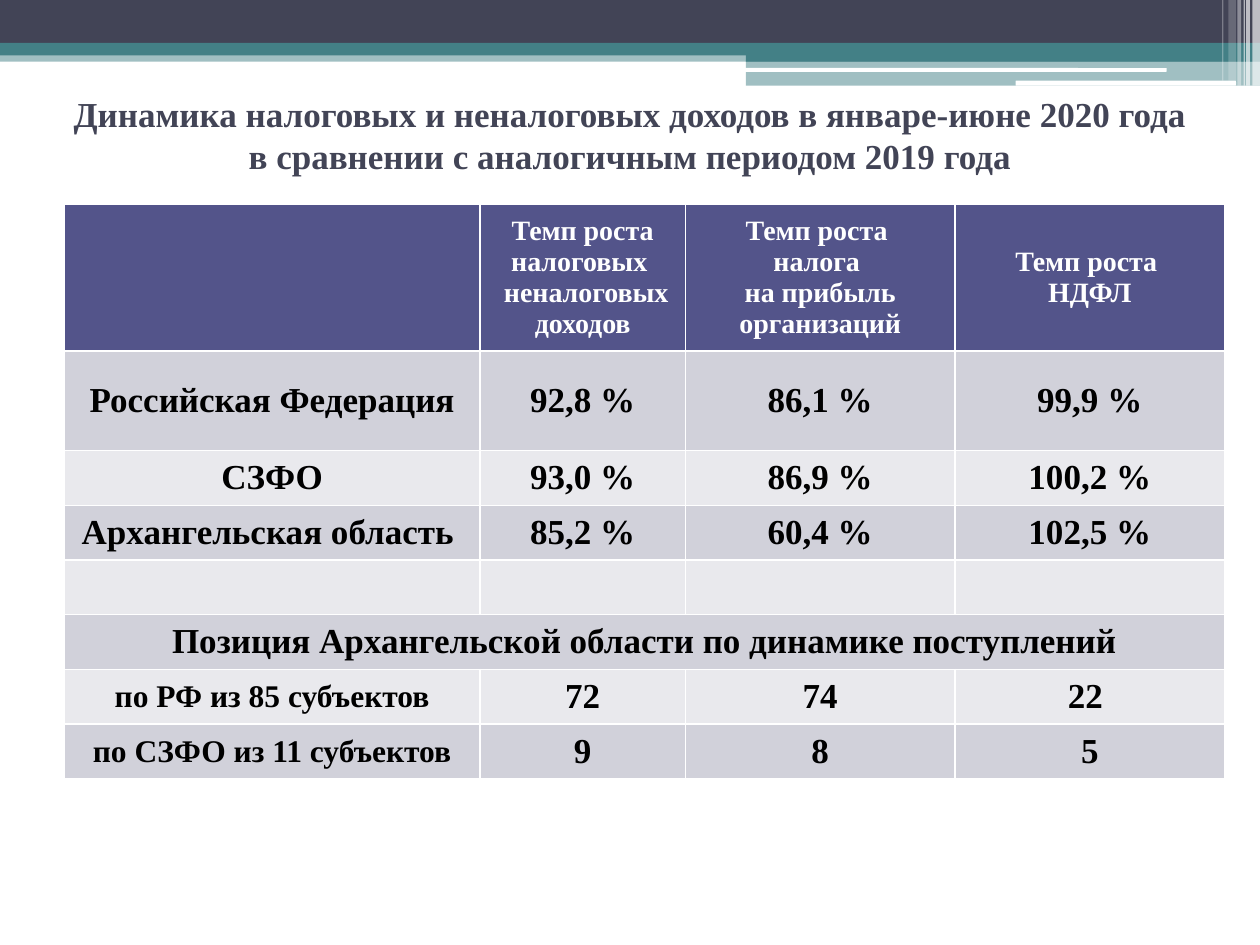
"""Build a slide with a table of tax revenue growth rates."""
from lxml.etree import SubElement
from pptx import Presentation
from pptx.dml.color import RGBColor
from pptx.enum.shapes import MSO_SHAPE as Shape
from pptx.enum.text import MSO_ANCHOR as Anchor, PP_ALIGN as Align
from pptx.oxml.ns import qn
from pptx.util import Inches, Pt

FONT = "Times New Roman"
WHITE = RGBColor(0xFF, 0xFF, 0xFF)
BLACK = RGBColor(0x00, 0x00, 0x00)
SLATE = RGBColor(0x42, 0x44, 0x56)
TEAL = RGBColor(0x43, 0x80, 0x86)
INDIGO = RGBColor(0x53, 0x54, 0x8A)
DARK_BAND = RGBColor(0xD1, 0xD1, 0xDA)
LIGHT_BAND = RGBColor(0xE9, 0xE9, 0xED)


def add_bar(left, top, width, height, color, opacity=100, kind=Shape.RECTANGLE):
    shape = slide.shapes.add_shape(
        kind, Inches(left), Inches(top), Inches(width), Inches(height))
    shape.shadow.inherit = False
    shape.line.fill.background()
    shape.fill.solid()
    shape.fill.fore_color.rgb = color
    if opacity < 100:
        color_element = shape.fill._xPr.find(qn("a:solidFill"))[0]
        SubElement(color_element, qn("a:alpha"), val=str(opacity * 1000))


def write_text(frame, text, size, color):
    frame.text = text
    for paragraph in frame.paragraphs:
        paragraph.alignment = Align.CENTER
        paragraph.font.name = FONT
        paragraph.font.size = Pt(size)
        paragraph.font.bold = True
        paragraph.font.color.rgb = color


presentation = Presentation()
presentation.slide_width = Inches(10)
presentation.slide_height = Inches(7.5)
slide = presentation.slides.add_slide(presentation.slide_layouts[6])

add_bar(0, 0.4, 10, 0.09, TEAL, 50)
add_bar(0, 0, 10, 0.34, SLATE)
add_bar(0, 0.34, 10, 0.1, TEAL)
add_bar(5.92, 0.39, 4.08, 0.1, TEAL)
add_bar(5.92, 0.48, 4.08, 0.2, TEAL, 50)
add_bar(5.91, 0.54, 3.35, 0.03, WHITE, kind=Shape.ROUNDED_RECTANGLE)
add_bar(8.06, 0.64, 1.75, 0.04, WHITE, kind=Shape.ROUNDED_RECTANGLE)

stripes = [
    (9.94, 0.06, 0.68, 65),
    (9.89, 0.03, 0.68, 65),
    (9.87, 0.01, 0.68, 60),
    (9.82, 0.03, 0.68, 40),
    (9.75, 0.06, 0.64, 20),
    (9.7, 0.01, 0.64, 30),
]
for left, width, height, opacity in stripes:
    add_bar(left, 0, width, height, WHITE, opacity)

title = slide.shapes.add_textbox(Inches(0), Inches(0.6), Inches(10), Inches(0.94))
title.text_frame.word_wrap = True
title.text_frame.vertical_anchor = Anchor.MIDDLE
write_text(
    title.text_frame,
    "Динамика налоговых и неналоговых доходов в январе-июне 2020 года\v"
    "в сравнении с аналогичным периодом 2019 года",
    20, SLATE)

rows = [
    ("", "Темп роста налоговых \n неналоговых доходов",
     "Темп роста \nналога \nна прибыль организаций", "Темп роста \nНДФЛ"),
    ("Российская Федерация", "92,8 %", "86,1 %", "99,9 %"),
    ("СЗФО", "93,0 %", "86,9 %", "100,2 %"),
    ("Архангельская область ", "85,2 %", "60,4 %", "102,5 %"),
    ("", "", "", ""),
    ("Позиция Архангельской области по динамике поступлений", "", "", ""),
    ("по РФ из 85 субъектов", "72", "74", "22 "),
    ("по СЗФО из 11 субъектов", "9", "8", "5"),
]
column_widths = [3.3, 1.63, 2.14, 2.14]
row_heights = [1.08, 0.79] + [0.41] * 6
POSITION_ROW = 5

table = slide.shapes.add_table(
    len(rows), len(column_widths), Inches(0.51), Inches(1.62),
    Inches(sum(column_widths)), Inches(sum(row_heights))).table
for column, width in zip(table.columns, column_widths):
    column.width = Inches(width)
for row, height in zip(table.rows, row_heights):
    row.height = Inches(height)

for row_index, texts in enumerate(rows):
    for column_index, text in enumerate(texts):
        cell = table.cell(row_index, column_index)
        cell.vertical_anchor = Anchor.MIDDLE
        cell.fill.solid()
        if row_index == 0:
            cell.fill.fore_color.rgb = INDIGO
            size, color = 16, WHITE
        else:
            cell.fill.fore_color.rgb = DARK_BAND if row_index % 2 else LIGHT_BAND
            is_rank_label = row_index > POSITION_ROW and column_index == 0
            size, color = 18 if is_rank_label else 20, BLACK
        write_text(cell.text_frame, text, size, color)
table.cell(POSITION_ROW, 0).merge(table.cell(POSITION_ROW, 3))

presentation.save("out.pptx")
